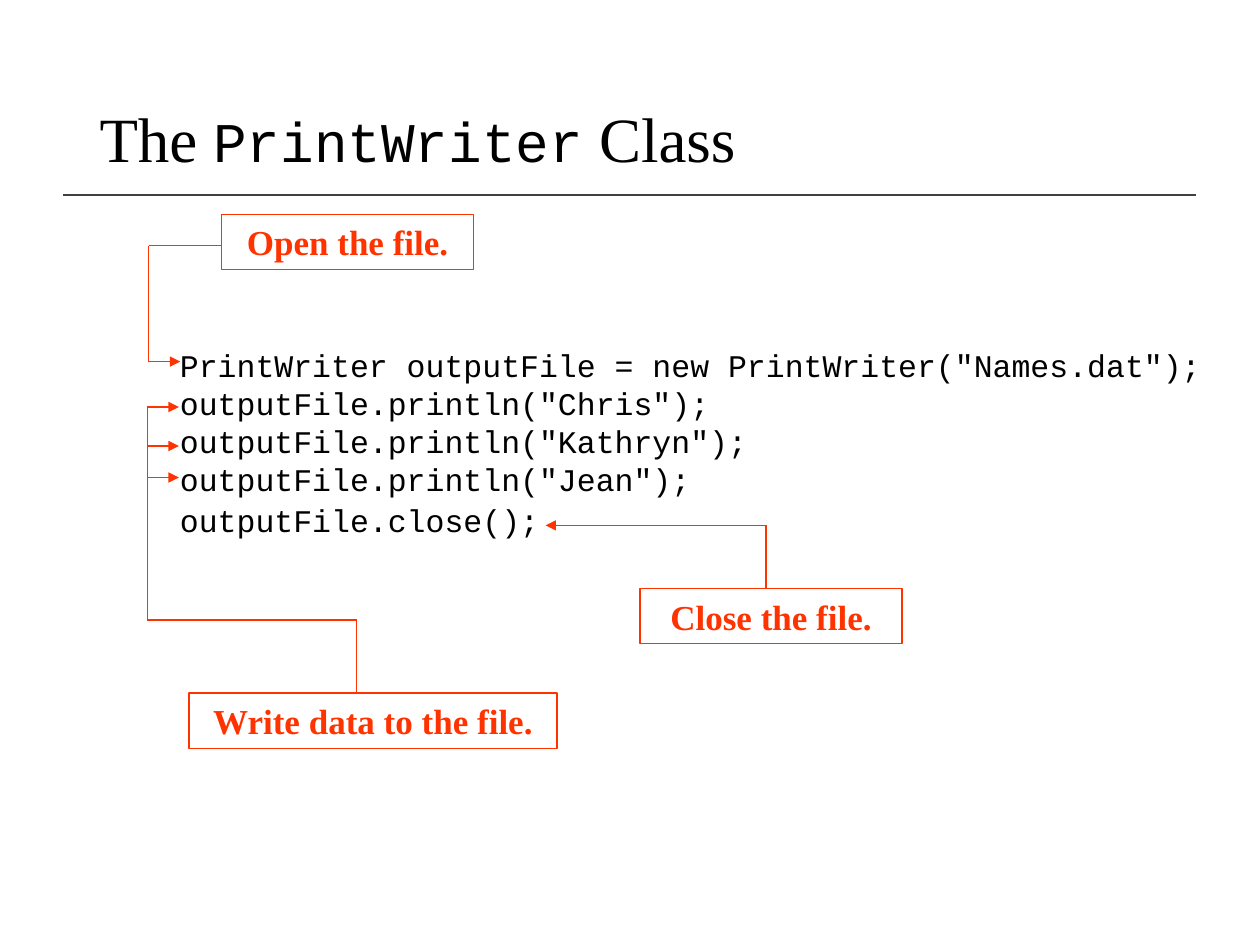
from itertools import pairwise

from lxml import etree
from pptx import Presentation
from pptx.dml.color import RGBColor
from pptx.enum.shapes import MSO_CONNECTOR, MSO_SHAPE
from pptx.enum.text import MSO_ANCHOR, PP_ALIGN
from pptx.oxml.ns import qn
from pptx.util import Inches, Pt

STRAIGHT = MSO_CONNECTOR.STRAIGHT
RECTANGLE = MSO_SHAPE.RECTANGLE
MIDDLE = MSO_ANCHOR.MIDDLE
LEFT, CENTER = PP_ALIGN.LEFT, PP_ALIGN.CENTER


def color(value):
    return RGBColor.from_string(value)


class CodeSlide:
    """Holds the style and the current slide of an annotated code listing."""

    serif, mono = "Times New Roman", "Courier New"
    ink, accent, rule_color = "000000", "FF3300", "404040"

    def __init__(self, deck):
        self.slide = deck.slides.add_slide(deck.slide_layouts[5])
        self.shapes = self.slide.shapes

    def style(self, font, name, size, value, bold=False):
        font.name, font.size, font.bold = name, Pt(size), bold
        font.color.rgb = color(value)

    def title(self, box, parts):
        heading = self.shapes.title
        heading.left, heading.top, heading.width, heading.height = map(Inches, box)
        frame = heading.text_frame
        frame.vertical_anchor = MIDDLE
        paragraph = frame.paragraphs[0]
        paragraph.alignment = LEFT
        paragraph.line_spacing = 0.9
        for text, name, size in parts:
            run = paragraph.add_run()
            run.text = text
            self.style(run.font, name, size, self.ink)

    def code(self, box, lines):
        frame = self.shapes.add_textbox(*map(Inches, box)).text_frame
        frame.word_wrap = True
        frame.text = "\n".join(lines)
        for paragraph in frame.paragraphs:
            self.style(paragraph.font, self.mono, 18, self.ink)
        frame.paragraphs[-1].space_before = Pt(2)

    def label(self, text, left, top, width):
        box = self.shapes.add_shape(
            RECTANGLE, *map(Inches, (left, top, width, 0.44)))
        box.shadow.inherit = False
        box.fill.background()
        box.line.color.rgb = color(self.accent)
        box.line.width = Pt(0.75)
        frame = box.text_frame
        frame.word_wrap = True
        frame.vertical_anchor = MIDDLE
        frame.text = text
        paragraph = frame.paragraphs[0]
        paragraph.alignment = CENTER
        self.style(paragraph.font, self.serif, 20, self.accent, bold=True)

    def line(self, start, end, value=accent, width=0.75, arrow=False):
        connector = self.shapes.add_connector(
            STRAIGHT, *map(Inches, (*start, *end)))
        connector.line.color.rgb = color(value)
        connector.line.width = Pt(width)
        if arrow:
            outline = connector.line._get_or_add_ln()
            etree.SubElement(outline, qn("a:tailEnd"), type="triangle")
        etree.SubElement(connector._element.spPr, qn("a:effectLst"))

    def route(self, points, arrow=True):
        for start, end in pairwise(points):
            self.line(start, end, arrow=arrow and end == points[-1])


def main():
    deck = Presentation()
    deck.slide_width, deck.slide_height = Inches(10), Inches(7.5)
    page = CodeSlide(deck)

    page.line((0.5, 1.55), (9.49, 1.55), page.rule_color, 1)
    page.title((0.69, 0.4, 8.62, 1.45), [
        ("The ", page.serif, 36),
        ("PrintWriter", page.mono, 32),
        (" Class", page.serif, 36),
    ])
    names = ["Chris", "Kathryn", "Jean"]
    page.code((1.33, 2.7, 8.5, 1.65), [
        'PrintWriter outputFile = new PrintWriter("Names.dat");',
        *(f'outputFile.println("{name}");' for name in names),
        "outputFile.close();",
    ])

    page.label("Open the file.", 1.76, 1.7, 2)
    page.route([(1.76, 1.95), (1.18, 1.95), (1.18, 2.87), (1.43, 2.87)])

    page.label("Write data to the file.", 1.5, 5.5, 2.92)
    write_x, write_rows = 1.17, [3.23, 3.54, 3.79]
    for row in write_rows:
        page.line((write_x, row), (1.42, row), arrow=True)
    page.route([(write_x, write_rows[0]), (write_x, 4.92),
                (2.83, 4.92), (2.83, 5.5)], arrow=False)

    page.label("Close the file.", 5.08, 4.67, 2.08)
    page.route([(6.08, 4.67), (6.08, 4.17), (4.33, 4.17)])

    deck.save("out.pptx")


if __name__ == "__main__":
    main()
